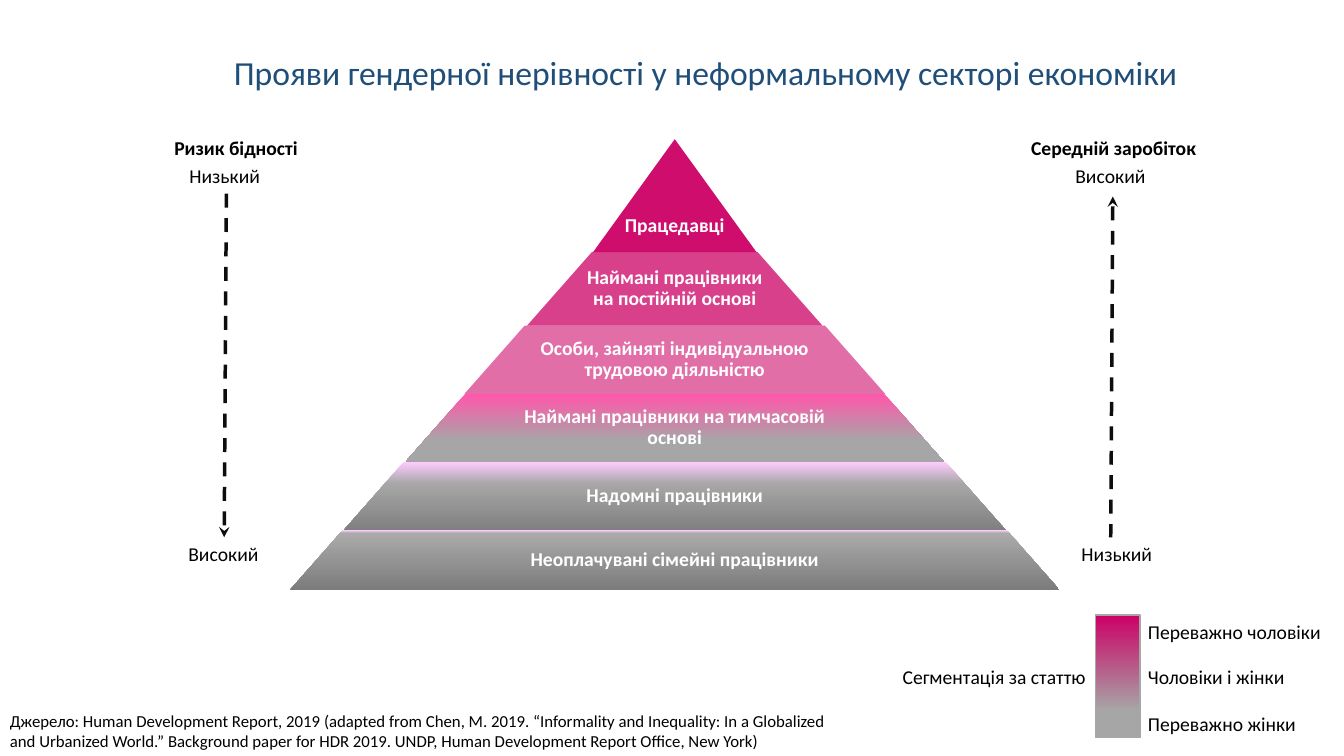
from lxml import etree
from pptx import Presentation
from pptx.dml.color import RGBColor
from pptx.enum import dml, shapes, text
from pptx.oxml.ns import qn
from pptx.util import Pt


def rgb(value):
    return RGBColor.from_string(value)


class SlideBuilder:
    font = "Calibri"
    size = 14
    black = "000000"
    white = "FFFFFF"
    grey = "A6A6A6"
    magenta = "CC0066"

    def __init__(self, s):
        self.s = s

    def set_text(self, tf, content, size=None, color=None, bold=False,
                 align=text.PP_ALIGN.LEFT, wrap=False):
        tf.word_wrap = wrap
        tf.auto_size = text.MSO_AUTO_SIZE.NONE
        p = tf.paragraphs[0]
        p.text = content
        p.alignment = align
        p.font.name = self.font
        p.font.size = Pt(size or self.size)
        p.font.bold = bold
        p.font.color.rgb = rgb(color or self.black)

    def title(self, box, content, **style):
        sp = self.s.shapes.title
        sp.left, sp.top, sp.width, sp.height = map(Pt, box)
        sp.text_frame.vertical_anchor = text.MSO_ANCHOR.TOP
        self.set_text(sp.text_frame, content, **style)

    def label(self, box, content, **style):
        sp = self.s.shapes.add_textbox(*map(Pt, box))
        self.set_text(sp.text_frame, content, **style)
        return sp

    def shape(self, kind, box):
        sp = self.s.shapes.add_shape(kind, *map(Pt, box))
        sp.shadow.inherit = False
        sp.line.fill.background()
        return sp

    def solid(self, sp, color, opacity):
        sp.fill.solid()
        sp.fill.fore_color.rgb = rgb(color)
        clr = sp._element.spPr.find(qn("a:solidFill"))[0]
        etree.SubElement(clr, qn("a:alpha"), val=str(opacity * 1000))

    def gradient(self, sp, stops):
        """Fill from top to bottom with (percent, colour) stops."""
        sp.fill.gradient()
        sp.fill.gradient_angle = 270
        gs_list = sp._element.spPr.find(qn("a:gradFill")).find(qn("a:gsLst"))
        for gs in list(gs_list):
            gs_list.remove(gs)
        for percent, color in stops:
            gs = etree.SubElement(gs_list, qn("a:gs"), pos=str(percent * 1000))
            etree.SubElement(gs, qn("a:srgbClr"), val=color)

    def tier(self, center, top, width, height, content, fill, share, anchor, bottom):
        sp = self.shape(shapes.MSO_SHAPE.TRAPEZOID,
                        (center - width / 2, top, width, height))
        sp.adjustments[0] = 0.882
        if isinstance(fill, int):
            self.solid(sp, self.magenta, fill)
        else:
            self.gradient(sp, fill)

        text_width = width * share
        box = self.label((center - text_width / 2, top, text_width, height),
                         content, color=self.white, bold=True,
                         align=text.PP_ALIGN.CENTER, wrap=True)
        tf = box.text_frame
        tf.margin_left = tf.margin_right = tf.margin_top = Pt(1.4)
        tf.margin_bottom = Pt(bottom)
        tf.vertical_anchor = anchor
        tf.paragraphs[0].line_spacing = 0.9

    def arrow(self, start, end, head, from_label=None, to_label=None):
        c = self.s.shapes.add_connector(shapes.MSO_CONNECTOR.STRAIGHT,
                                        *map(Pt, start + end))
        if from_label is not None:
            c.begin_connect(from_label, 2)
        if to_label is not None:
            c.end_connect(to_label, 0)
        c.line.color.rgb = rgb("0D0D0D")
        c.line.width = Pt(2.5)
        c.line.dash_style = dml.MSO_LINE.DASH
        spPr = c._element.spPr
        etree.SubElement(spPr.find(qn("a:ln")), qn(head), type="stealth")
        etree.SubElement(spPr, qn("a:effectLst"))


def main():
    prs = Presentation()
    prs.slide_width, prs.slide_height = Pt(960), Pt(540)
    b = SlideBuilder(prs.slides.add_slide(prs.slide_layouts[5]))

    # Title and source
    b.title((159.8, 33.1, 695.5, 36),
            "Прояви гендерної нерівності у неформальному секторі економіки",
            size=24, color="1F4E79")
    b.label((0, 504, 607, 36),
            "Джерело: Human Development Report, 2019 (adapted from Chen, M. 2019. "
            "“Informality and Inequality: In a Globalized and Urbanized World.” "
            "Background paper for HDR 2019. UNDP, Human Development Report Office, "
            "New York)", size=12, wrap=True)

    # Pyramid: width, height, text, opacity or gradient stops
    tiers = [
        (116.6, 80.6, "Працедавці", 95),
        (211, 52.6, "Наймані працівники на постійній основі", 75),
        (301, 49, "Особи, зайняті індивідуальною трудовою діяльністю", 57),
        (384.5, 48.2, "Наймані працівники на тимчасовій основі",
         [(0, "FF57AB"), (70, b.grey), (100, b.grey)]),
        (473, 49, "Надомні працівники",
         [(0, "FFCCFF"), (33, b.grey), (100, "808080")]),
        (549.4, 42.5, "Неоплачувані сімейні працівники",
         [(0, "FFCCFF"), (5, "AAAAAA"), (100, "7C7C7C")]),
    ]
    top = 99.4
    for i, (width, height, content, fill) in enumerate(tiers):
        # The peak holds its text near the base, the others in the middle
        if i == 0:
            share, anchor, bottom = 1, text.MSO_ANCHOR.BOTTOM, 11
        else:
            share, anchor, bottom = 0.65, text.MSO_ANCHOR.MIDDLE, 1.4
        b.tier(482, top, width, height, content, fill, share, anchor, bottom)
        top += height

    # Legend
    bar = b.shape(shapes.MSO_SHAPE.RECTANGLE, (782.6, 439.2, 31.7, 87.8))
    b.gradient(bar, [(0, b.magenta), (78, b.grey), (100, b.grey)])
    bar.line.color.rgb = rgb(b.grey)
    bar.line.width = Pt(1)
    b.label((636.5, 471.6, 146.2, 24.5), "Сегментація за статтю",
            align=text.PP_ALIGN.RIGHT)
    for y, width, content in [(439.2, 139.7, "Переважно чоловіки"),
                              (471.6, 113, "Чоловіки і жінки"),
                              (504.7, 121, "Переважно жінки")]:
        b.label((812.9, y, width, 24.5), content)

    # Scales beside the pyramid
    b.label((117.4, 93.6, 103.7, 24.5), "Ризик бідності", bold=True)
    b.label((729.4, 93.6, 133.2, 24.5), "Середній заробіток", bold=True)
    low_risk = b.label((128.2, 113.8, 67, 24.5), "Низький")
    high_risk = b.label((127.4, 383.8, 65.5, 24.5), "Високий")
    b.label((761, 113.8, 65.5, 24.5), "Високий")
    b.label((765.4, 383.8, 67, 24.5), "Низький")
    b.arrow((161.7, 138.3), (160.2, 383.8), "a:tailEnd", low_risk, high_risk)
    b.arrow((794.9, 140.4), (793.4, 383.8), "a:headEnd")

    prs.save("out.pptx")


if __name__ == "__main__":
    main()
